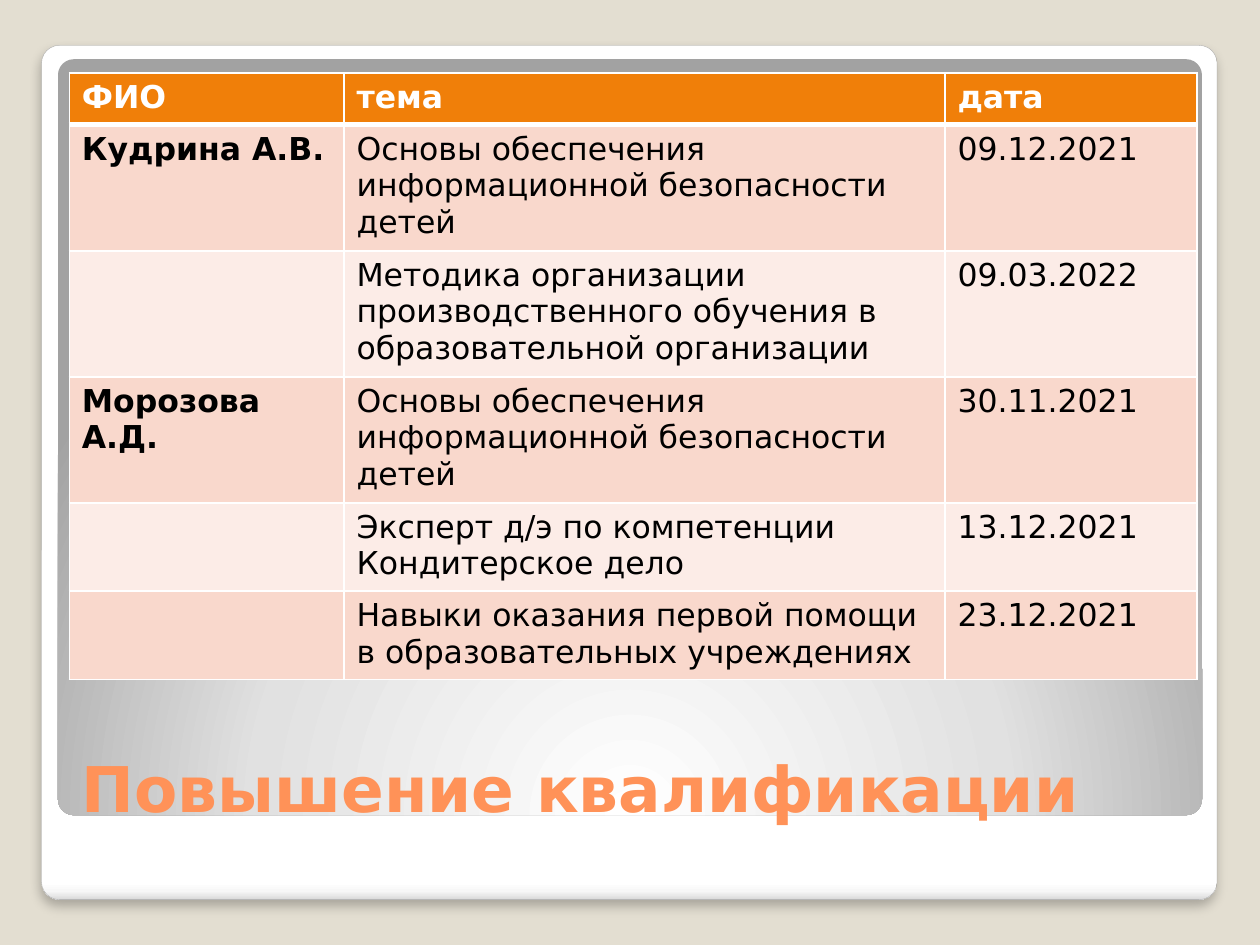
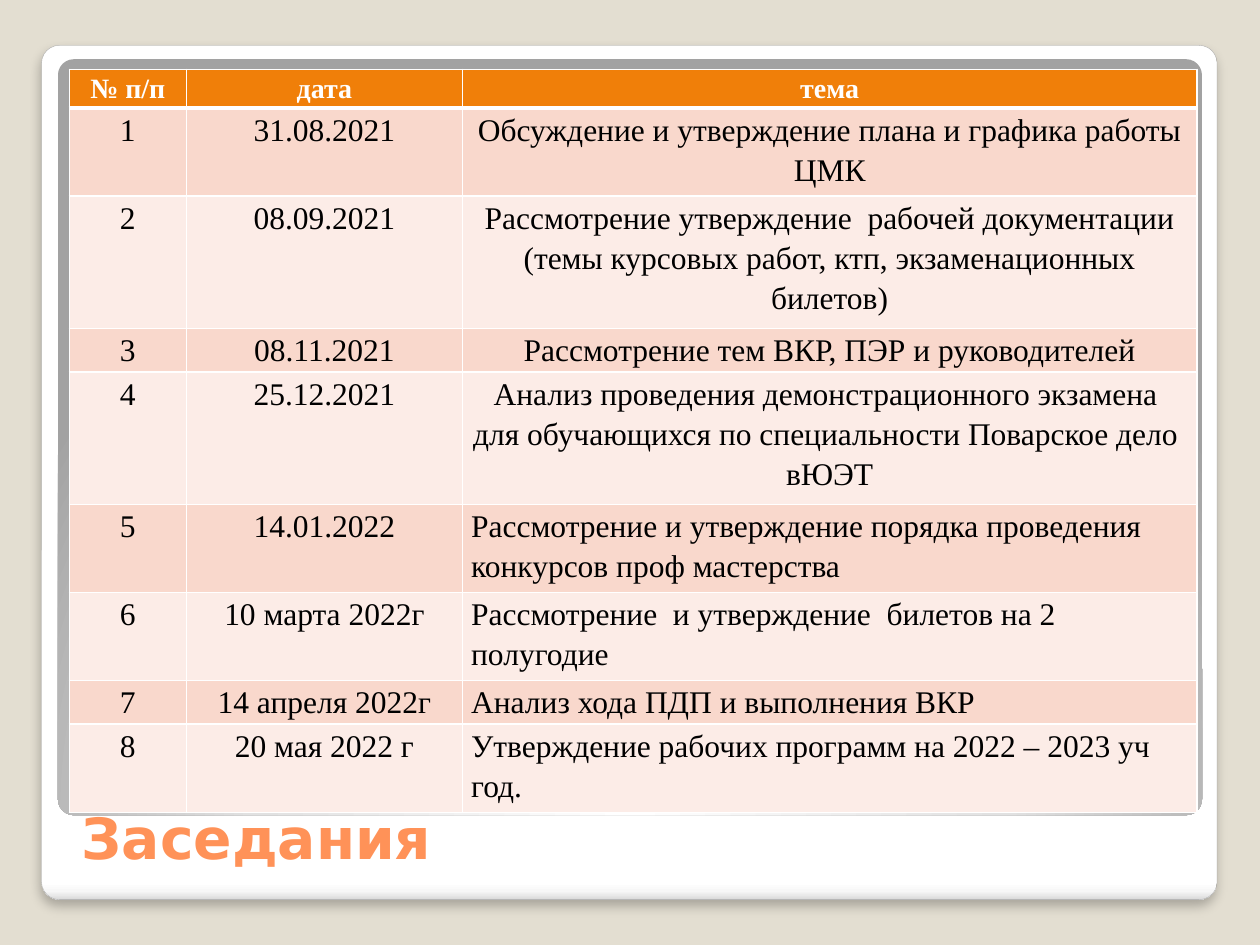
from lxml import etree
from pptx import Presentation
from pptx.dml.color import RGBColor
from pptx.enum.shapes import MSO_SHAPE
from pptx.enum.text import MSO_ANCHOR, PP_ALIGN
from pptx.oxml import parse_xml
from pptx.oxml.ns import qn
from pptx.util import Inches, Pt

ROUND = MSO_SHAPE.ROUNDED_RECTANGLE
BOTTOM = MSO_ANCHOR.BOTTOM
LEFT, CENTER = PP_ALIGN.LEFT, PP_ALIGN.CENTER
NS = 'xmlns:a="http://schemas.openxmlformats.org/drawingml/2006/main"'

SANS, SERIF = "DejaVu Sans", "Times New Roman"
SAND, WHITE, BLACK, EDGE = "E3DED1", "FFFFFF", "000000", "A4A4A4"
PEACH, ORANGE = "FF9258", "F07F09"
BANDS = ("F9D8CC", "FCECE7")
CARD = (0.33, 0.36, 9.33, 6.78)
PANEL = (0.46, 0.47, 9.08, 6)
CARD_STOPS = [(0, WHITE), (98, WHITE), (99, "F7F7F7"), (100, "DADADA")]
PANEL_STOPS = [(0, WHITE), (55, "E1E1E1"), (100, "A2A2A2")]
DOWN = '<a:lin ang="5400000" scaled="0"/>'
GLOW = ('<a:path path="circle"><a:fillToRect l="50000" t="175000" '
        'r="50000" b="-75000"/></a:path>')

COURSES = [
    ("ФИО", "тема", "дата"),
    ("Кудрина А.В.", "Основы обеспечения информационной безопасности  детей", "09.12.2021"),
    ("", "Методика организации производственного обучения в образовательной организации", "09.03.2022"),
    ("Морозова А.Д.", "Основы обеспечения информационной безопасности  детей", "30.11.2021"),
    ("", "Эксперт д/э по компетенции Кондитерское дело", "13.12.2021"),
    ("", "Навыки оказания первой помощи в образовательных учреждениях", "23.12.2021"),
]
MEETINGS = [
    ("№ п/п", "дата", "тема"),
    ("1", "31.08.2021", "Обсуждение и утверждение плана и графика работы ЦМК"),
    ("2", "08.09.2021", "Рассмотрение утверждение  рабочей документации "
     "(темы курсовых работ, ктп, экзаменационных билетов)"),
    ("3", "08.11.2021", "Рассмотрение тем ВКР, ПЭР и руководителей"),
    ("4", "25.12.2021", "Анализ проведения демонстрационного экзамена  "
     "для обучающихся по специальности Поварское дело  вЮЭТ"),
    ("5", "14.01.2022", "Рассмотрение и утверждение порядка проведения конкурсов проф мастерства"),
    ("6", "10 марта 2022г", "Рассмотрение  и утверждение  билетов на 2 полугодие"),
    ("7", "14 апреля 2022г", "Анализ хода ПДП и выполнения ВКР"),
    ("8", "20 мая 2022 г", "Утверждение рабочих программ на 2022 – 2023 уч год."),
]


def color(code):
    return RGBColor.from_string(code)


def inches(box):
    return [Inches(side) for side in box]


def add_run(para, text, font, size, tint, bold):
    run = para.add_run()
    run.text = text
    run.font.name = font
    run.font.size = Pt(size)
    run.font.bold = bold
    run.font.color.rgb = color(tint)


def add_plate(slide, box, stops, path):
    plate = slide.shapes.add_shape(ROUND, *inches(box))
    plate.adjustments[0] = 0.021
    marks = "".join(f'<a:gs pos="{pos * 1000}"><a:srgbClr val="{tint}"/></a:gs>'
                    for pos, tint in stops)
    plate._element.spPr.insert(2, parse_xml(
        f'<a:gradFill {NS} rotWithShape="1"><a:gsLst>{marks}</a:gsLst>{path}</a:gradFill>'))
    plate.line.fill.background()
    plate.shadow.inherit = False
    return plate


def add_frame(slide):
    slide.background.fill.solid()
    slide.background.fill.fore_color.rgb = color(SAND)
    card = add_plate(slide, CARD, CARD_STOPS, DOWN)
    card.line.color.rgb = color(EDGE)
    card.line.width = Pt(0.16)
    card._element.spPr.find(qn("a:effectLst")).append(parse_xml(
        f'<a:outerShdw {NS} blurRad="{Pt(6)}" dist="{Pt(4)}" dir="5400000" rotWithShape="0">'
        f'<a:srgbClr val="{BLACK}"><a:alpha val="25000"/></a:srgbClr></a:outerShdw>'))
    add_plate(slide, PANEL, PANEL_STOPS, GLOW)


def add_title(slide, box, text, size):
    frame = slide.shapes.add_textbox(*inches(box)).text_frame
    frame.word_wrap = True
    frame.vertical_anchor = BOTTOM
    add_run(frame.paragraphs[0], text, SANS, size, PEACH, True)


def add_edges(cell, widths):
    props = cell._tc.get_or_add_tcPr()
    for side, width in zip("LRTB", widths):
        line = etree.SubElement(props, qn(f"a:ln{side}"), w=str(Pt(width)))
        fill = etree.SubElement(line, qn("a:solidFill"))
        etree.SubElement(fill, qn("a:srgbClr"), val=WHITE)


def add_grid(slide, box, rows, cols, heights, style):
    grid = slide.shapes.add_table(len(rows), len(cols), *inches(box)).table
    grid.horz_banding = False
    for col, width in zip(grid.columns, cols):
        col.width = Inches(width)
    for r, (row, height) in enumerate(zip(rows, heights)):
        grid.rows[r].height = Inches(height)
        for c, text in enumerate(row):
            cell = grid.cell(r, c)
            add_edges(cell, (1, 1, 3 if r == 1 else 1, 3 if r == 0 else 1))
            cell.fill.solid()
            cell.fill.fore_color.rgb = color(BANDS[(r - 1) % 2] if r else ORANGE)
            if text:
                style(cell, r, c, text)


def style_course(cell, r, c, text):
    add_run(cell.text_frame.paragraphs[0], text, SANS, 18,
            BLACK if r else WHITE, r == 0 or c == 0)


def style_meeting(cell, r, c, text):
    cell.margin_left = cell.margin_right = Inches(0.07)
    cell.margin_top = cell.margin_bottom = 0
    para = cell.text_frame.paragraphs[0]
    para.alignment = LEFT if c == 2 and r > 4 else CENTER
    para.line_spacing = 1.15
    add_run(para, text, SERIF, 18 if r else 16, BLACK if r else WHITE, r == 0)


def add_courses(slide):
    add_frame(slide)
    add_title(slide, (0.55, 5.45, 8.95, 1.15), "Повышение квалификации", 36)
    add_grid(slide, (0.55, 0.58, 8.95, 4.81), COURSES, (2.18, 4.77, 2),
             [0.41] * len(COURSES), style_course)


def add_meetings(slide):
    add_frame(slide)
    add_title(slide, (0.55, 6.33, 8.95, 0.63), "Заседания", 32.4)
    one, two, three = 0.34, 0.7, 1.05
    add_grid(slide, (0.55, 0.55, 8.95, 5.86), MEETINGS, (0.93, 2.19, 5.83),
             (0.3, two, three, one, three, two, two, one, two), style_meeting)


def main():
    deck = Presentation()
    deck.slide_width, deck.slide_height = Inches(10), Inches(7.5)
    for build in (add_courses, add_meetings):
        build(deck.slides.add_slide(deck.slide_layouts[6]))
    deck.save("out.pptx")


if __name__ == "__main__":
    main()
